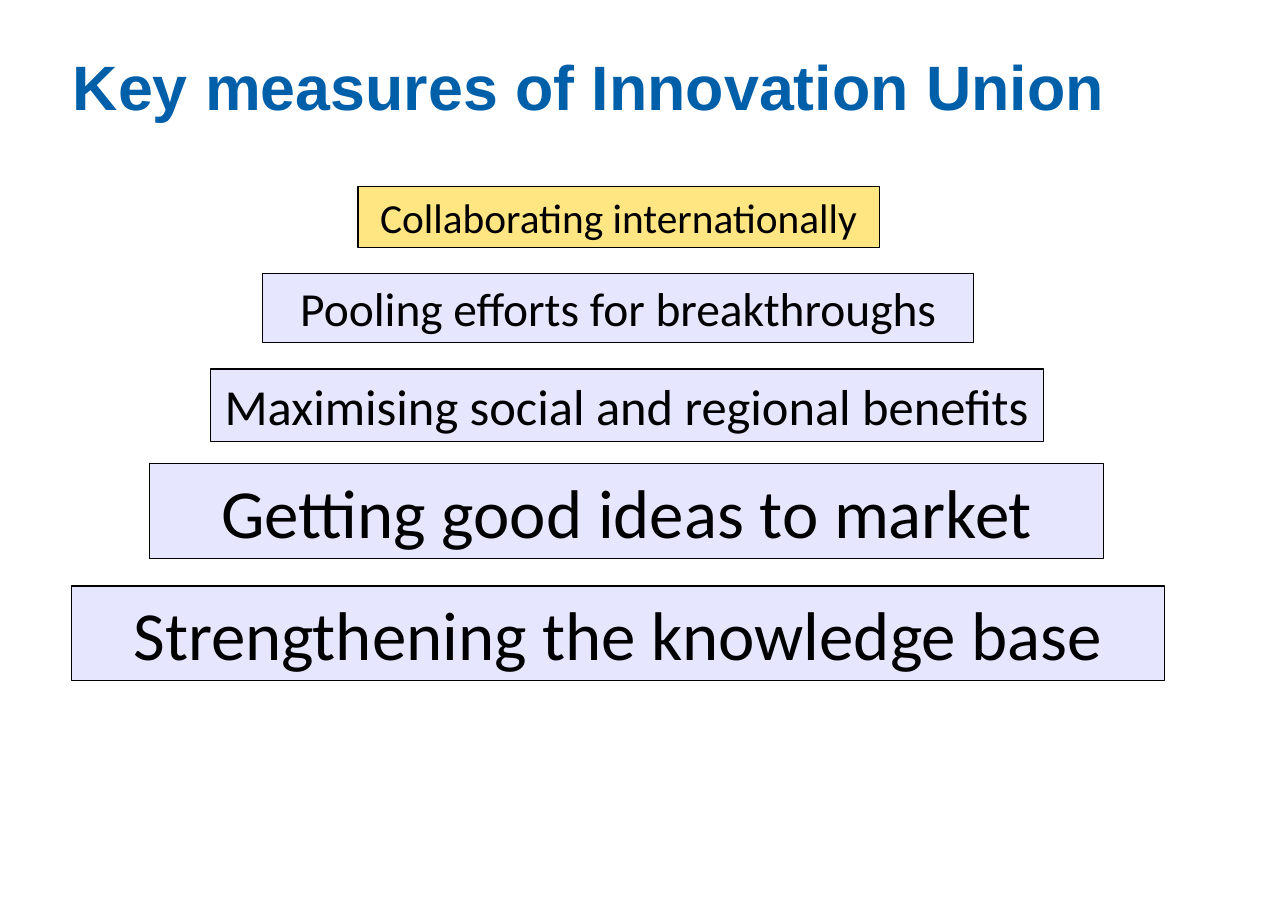
import pptx
import pptx.dml.color
import pptx.enum.shapes
import pptx.enum.text
import pptx.oxml.ns
import pptx.util
from lxml import etree

Inches = pptx.util.Inches
Pt = pptx.util.Pt
PP_ALIGN = pptx.enum.text.PP_ALIGN
MSO_ANCHOR = pptx.enum.text.MSO_ANCHOR

LILAC, GOLD = "CCCCFF", "FFCC00"
MEASURES = [
    ("Collaborating internationally", 27, 3.25, 1.69, 4.73, GOLD),
    ("Pooling efforts for breakthroughs", 31, 2.38, 2.48, 6.46, LILAC),
    ("Maximising social and regional benefits", 33, 1.91, 3.35, 7.56, LILAC),
    ("Getting good ideas to market", 45, 1.36, 4.21, 8.66, LILAC),
    ("Strengthening the knowledge base", 45, 0.65, 5.32, 9.92, LILAC),
]


def set_color(color, value):
    color.rgb = pptx.dml.color.RGBColor.from_string(value)


def set_alpha(fill_shape, percent):
    clr = fill_shape._element.spPr.find(".//" + pptx.oxml.ns.qn("a:srgbClr"))
    alpha = etree.SubElement(clr, pptx.oxml.ns.qn("a:alpha"))
    alpha.set("val", str(percent * 1000))


def add_text(tf, text, font, size, color, align, bold=False):
    p = tf.paragraphs[0]
    p.alignment = align
    r = p.add_run()
    r.text = text
    r.font.name = font
    r.font.size = Pt(size)
    r.font.bold = bold
    set_color(r.font.color, color)


def add_title(s, left, top, width, height):
    sp = s.shapes.title
    sp.left, sp.top = Inches(left), Inches(top)
    sp.width, sp.height = Inches(width), Inches(height)
    tf = sp.text_frame
    tf.auto_size = pptx.enum.text.MSO_AUTO_SIZE.NONE
    tf.vertical_anchor = MSO_ANCHOR.TOP
    tf.margin_left = Inches(0.07)
    tf.margin_top = Inches(0.1)
    add_text(tf, "Key measures of Innovation Union", "Arial", 41, "005FA9",
             PP_ALIGN.LEFT, bold=True)


def add_measure(s, text, size, left, top, width, color):
    height = round(size * 1.22 / 72 + 0.1, 2)
    sp = s.shapes.add_shape(pptx.enum.shapes.MSO_SHAPE.RECTANGLE,
                            Inches(left), Inches(top), Inches(width), Inches(height))
    sp.shadow.inherit = False
    sp.fill.solid()
    set_color(sp.fill.fore_color, color)
    set_alpha(sp, 49)
    set_color(sp.line.color, "000000")
    sp.line.width = Pt(0.75)
    tf = sp.text_frame
    tf.word_wrap = False
    tf.vertical_anchor = MSO_ANCHOR.MIDDLE
    add_text(tf, text, "Calibri", size, "000000", PP_ALIGN.CENTER)


def main():
    prs = pptx.Presentation()
    prs.slide_width, prs.slide_height = Inches(11.69), Inches(8.27)
    s = prs.slides.add_slide(prs.slide_layouts[5])
    add_title(s, 0.59, 0.33, 10.52, 1.38)
    for measure in MEASURES:
        add_measure(s, *measure)
    prs.save("out.pptx")


if __name__ == "__main__":
    main()
